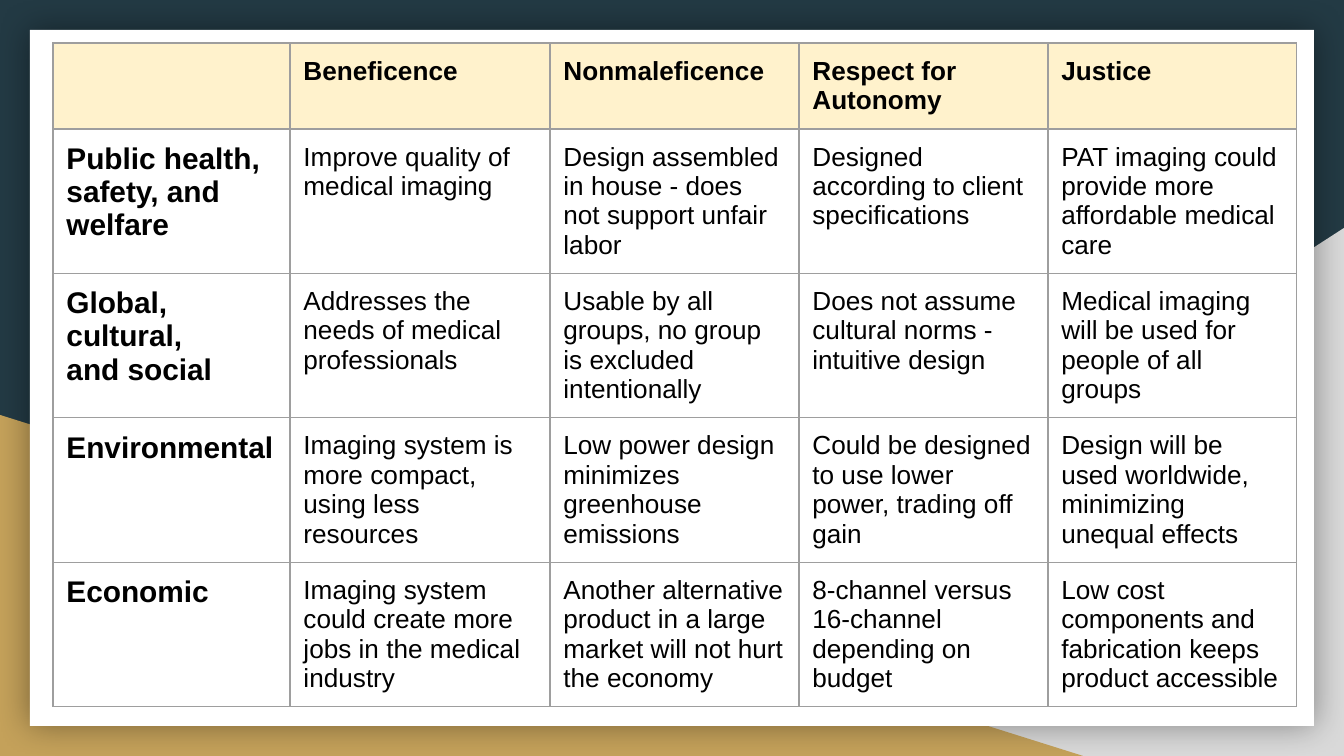
from lxml.etree import SubElement
from pptx import Presentation
from pptx.dml.color import RGBColor
from pptx.enum.shapes import MSO_SHAPE
from pptx.oxml import parse_xml
from pptx.oxml.ns import qn
from pptx.util import Emu, Pt

SCALE = 914400 / 134.4
NAMESPACE = "http://schemas.openxmlformats.org/drawingml/2006/main"


def px(length):
    return Emu(round(length * SCALE))


def paint(fill, color):
    fill.solid()
    fill.fore_color.rgb = RGBColor.from_string(color)


deck = Presentation()
deck.slide_width, deck.slide_height = px(1344), px(756)
page = deck.slides.add_slide(deck.slide_layouts[6])
paint(page.background.fill, "233A44")

backdrop = [
    (MSO_SHAPE.RIGHT_TRIANGLE, (527, 228, 817, 528), "D9D9D9"),
    (MSO_SHAPE.RIGHT_TRIANGLE, (0, 415, 1083, 341), "C4A15A"),
    (MSO_SHAPE.RECTANGLE, (30, 30, 1284, 696), "FFFFFF"),
]
panels = []
for kind, bounds, color in backdrop:
    panel = page.shapes.add_shape(kind, *map(px, bounds))
    panel.shadow.inherit = False
    panel.line.fill.background()
    paint(panel.fill, color)
    panels.append(panel)

gray_triangle, gold_triangle, card = panels
gray_triangle._element.spPr.find(qn("a:xfrm")).set("flipH", "1")
effects = card._element.spPr.find(qn("a:effectLst"))
effects.append(parse_xml(
    f'<a:outerShdw xmlns:a="{NAMESPACE}" blurRad="{Pt(18)}" dist="0" dir="0" '
    'algn="ctr" rotWithShape="0"><a:srgbClr val="000000">'
    '<a:alpha val="40000"/></a:srgbClr></a:outerShdw>'
))

rows = [
    ["", "Beneficence", "Nonmaleficence", "Respect for Autonomy", "Justice"],
    ["Public health,\nsafety, and\nwelfare",
     "Improve quality of medical imaging",
     "Design assembled in house - does not support unfair labor",
     "Designed according to client specifications",
     "PAT imaging could provide more affordable medical care"],
    ["Global, cultural,\nand social",
     "Addresses the needs of medical professionals",
     "Usable by all groups, no group is excluded intentionally",
     "Does not assume cultural norms - intuitive design",
     "Medical imaging will be used for people of all groups"],
    ["Environmental",
     "Imaging system is more compact, using less resources",
     "Low power design minimizes greenhouse emissions",
     "Could be designed to use lower power, trading off gain",
     "Design will be used worldwide, minimizing unequal effects"],
    ["Economic",
     "Imaging system could create more jobs in the medical industry",
     "Another alternative product in a large market will not hurt the economy",
     "8-channel versus 16-channel depending on budget",
     "Low cost components and fabrication keeps product accessible"],
]
widths = [237, 260, 249, 249, 249]
heights = [86, 144, 144, 144, 144]

frame = page.shapes.add_table(
    len(rows), len(widths), px(53), px(43), px(sum(widths)), px(sum(heights))
)
table = frame.table
for column, width in zip(table.columns, widths):
    column.width = px(width)

for row_index, texts in enumerate(rows):
    table.rows[row_index].height = px(heights[row_index])
    for column_index, text in enumerate(texts):
        cell = table.cell(row_index, column_index)
        cell.margin_left = cell.margin_right = Pt(7.2)
        cell.margin_top = cell.margin_bottom = Pt(7.2)
        cell.text = text
        is_header = row_index == 0
        is_label = column_index == 0 and not is_header
        for para in cell.text_frame.paragraphs:
            para.font.name = "Arial"
            para.font.size = Pt(16 if is_label else 14)
            para.font.bold = is_header or is_label
            para.font.color.rgb = RGBColor.from_string("000000")
        properties = cell._tc.get_or_add_tcPr()
        for side in ("lnL", "lnR", "lnT", "lnB"):
            border = SubElement(properties, qn(f"a:{side}"), w=str(Pt(0.75)))
            solid = SubElement(border, qn("a:solidFill"))
            SubElement(solid, qn("a:srgbClr"), val="9E9E9E")
        if is_header:
            paint(cell.fill, "FFF2CC")
        else:
            cell.fill.background()

deck.save("out.pptx")
